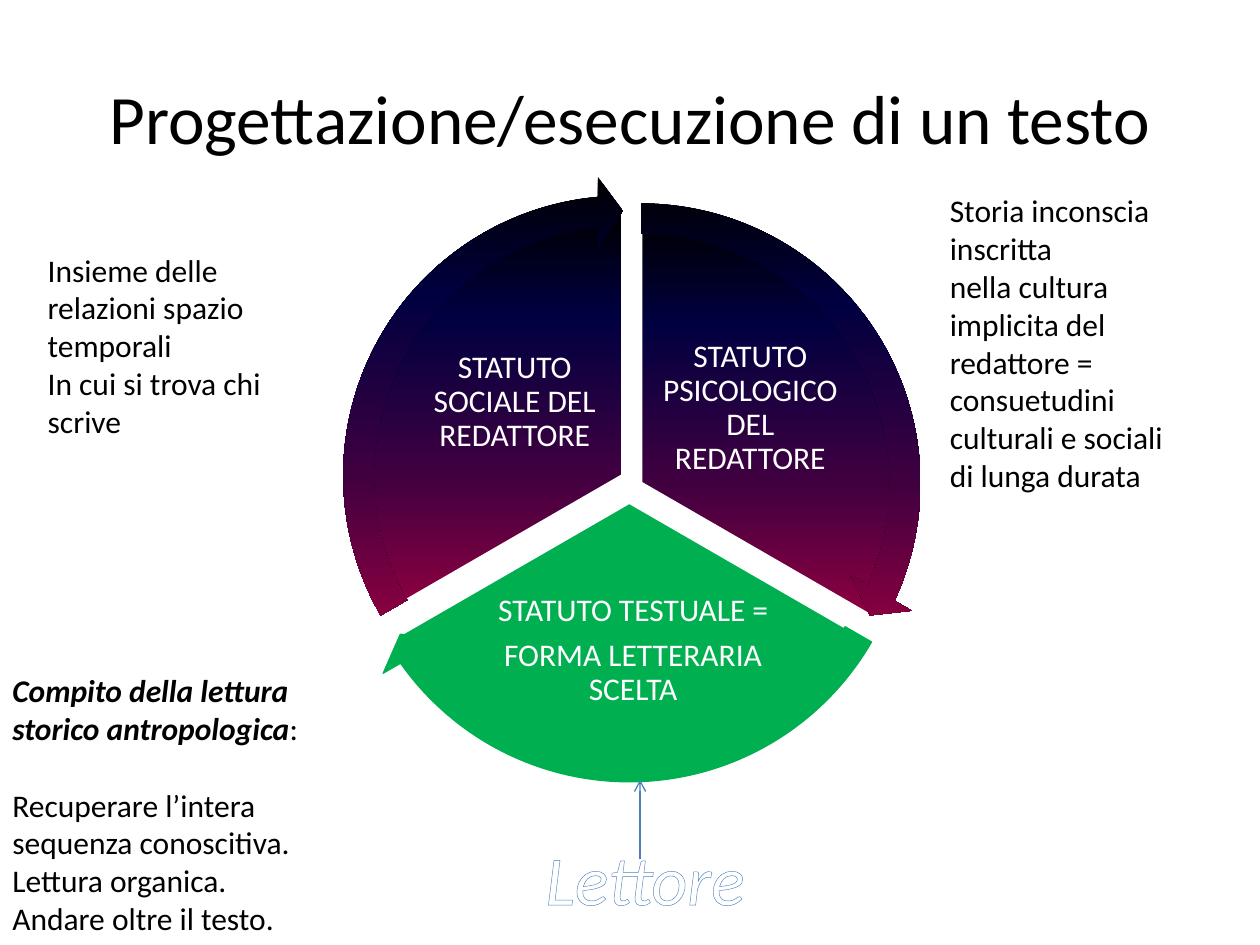
from copy import deepcopy

from lxml.etree import SubElement
from pptx import Presentation
from pptx.dml.color import RGBColor
from pptx.enum.shapes import MSO_CONNECTOR, MSO_SHAPE
from pptx.enum.text import MSO_ANCHOR, MSO_AUTO_SIZE, PP_ALIGN
from pptx.oxml.ns import qn
from pptx.util import Inches, Pt

BLACK = RGBColor(0x00, 0x00, 0x00)
WHITE = RGBColor(0xFF, 0xFF, 0xFF)
GREEN = RGBColor(0x00, 0xB0, 0x50)
CONNECTOR_BLUE = RGBColor(0x4B, 0x7E, 0xBC)
OUTLINE_BLUE = RGBColor(0x4F, 0x81, 0xBD)
SUNSET = [
    (0, BLACK),
    (0.2, RGBColor(0x00, 0x00, 0x40)),
    (0.5, RGBColor(0x40, 0x00, 0x40)),
    (0.75, RGBColor(0x8F, 0x00, 0x40)),
    (0.9, RGBColor(0xF2, 0x73, 0x00)),
    (1, RGBColor(0xFF, 0xBF, 0x00)),
]

BODY = {"size": Pt(18), "name": "Calibri"}
LABEL_FRAME = dict(
    {f"margin_{side}": Inches(0.03) for side in ("left", "top", "right", "bottom")},
    vertical_anchor=MSO_ANCHOR.MIDDLE,
)
LABEL_PARAGRAPH = {
    "alignment": PP_ALIGN.CENTER,
    "line_spacing": 0.9,
    "space_after": Pt(6.3),
}
GROWING = {"auto_size": MSO_AUTO_SIZE.SHAPE_TO_FIT_TEXT}

PIE_SIZE = 4.23
RING_MARGIN = 0.265
SECTORS = [
    {
        "offset": (0.14, 0.06), "fill": SUNSET, "pie": (162, 18),
        "arrow": (0.051, 3.275, 14.725, 161.994, 0.059),
        "label": (2.37, 0.95, 1.51, 1.26),
        "text": ["STATUTO PSICOLOGICO DEL REDATTORE"],
    },
    {
        "offset": (0.05, 0.21), "fill": GREEN, "pie": (18, 90),
        "arrow": (0.051, 3.275, 86.72, 18.005, 0.059),
        "label": (1.06, 2.95, 2.27, 1.11),
        "text": ["STATUTO TESTUALE =", "FORMA LETTERARIA SCELTA"],
    },
    {
        "offset": (0, 0), "fill": SUNSET, "pie": (90, 162),
        "arrow": (0.051, 3.275, 158.73, 90, 0.059),
        "label": (0.5, 0.9, 1.51, 1.26),
        "text": ["STATUTO SOCIALE DEL REDATTORE"],
    },
]


def apply(obj, values):
    for name, value in values.items():
        setattr(obj, name, value)


def add_run(p, text, color, font):
    r = p.add_run()
    r.text = text
    apply(r.font, font)
    r.font.color.rgb = color
    return r


def add_text(s, box, paragraphs, color=BLACK, frame=GROWING, paragraph={}, font=BODY):
    tf = s.shapes.add_textbox(*map(Inches, box)).text_frame
    apply(tf, {"word_wrap": True, **frame})
    for i, text in enumerate(paragraphs):
        p = tf.add_paragraph() if i else tf.paragraphs[0]
        apply(p, paragraph)
        add_run(p, text, color, font)
    return tf


def paint(sp, fill):
    if fill is not SUNSET:
        sp.fill.solid()
        sp.fill.fore_color.rgb = fill
        return
    sp.fill.gradient()
    sp.fill.gradient_angle = 270
    stop_list = sp._element.spPr.find(qn("a:gradFill")).find(qn("a:gsLst"))
    while len(stop_list) < len(SUNSET):
        stop_list.append(deepcopy(stop_list[0]))
    for stop, (position, color) in zip(sp.fill.gradient_stops, SUNSET):
        stop.position = position
        stop.color.rgb = color


def add_sector_shape(s, kind, x, y, size, angles, fill, line=None):
    sp = s.shapes.add_shape(kind, *map(Inches, (x, y, size, size)))
    sp.shadow.inherit = False
    for i, angle in enumerate(angles):
        sp.adjustments[i] = angle
    paint(sp, fill)
    if line:
        color, width = line
        sp.line.color.rgb = color
        sp.line.width = Pt(width)
    else:
        sp.line.fill.background()


def add_cycle(s, left, top):
    for sector in SECTORS:
        dx, dy = sector["offset"]
        add_sector_shape(s, MSO_SHAPE.PIE, left + dx, top + dy, PIE_SIZE,
                         sector["pie"], sector["fill"], (WHITE, 2))
        x, y, w, h = sector["label"]
        add_text(s, (left + x, top + y, w, h), sector["text"], WHITE,
                 LABEL_FRAME, LABEL_PARAGRAPH)
    for sector in SECTORS:
        dx, dy = sector["offset"]
        line = (GREEN, 0.75) if sector["fill"] is GREEN else None
        add_sector_shape(s, MSO_SHAPE.CIRCULAR_ARROW,
                         left + dx - RING_MARGIN, top + dy - RING_MARGIN,
                         PIE_SIZE + 2 * RING_MARGIN, sector["arrow"], sector["fill"], line)


def add_title(s, box):
    title = s.shapes.title
    apply(title, dict(zip(("left", "top", "width", "height"), map(Inches, box))))
    tf = title.text_frame
    tf.vertical_anchor = MSO_ANCHOR.MIDDLE
    p = tf.paragraphs[0]
    p.alignment = PP_ALIGN.CENTER
    add_run(p, "Progettazione/esecuzione di un testo", BLACK,
            {"size": Pt(39.6), "name": "Calibri"})


def add_reader(s, box):
    tf = add_text(s, box, ["Lettore"], WHITE, {**GROWING, "word_wrap": False},
                  {"alignment": PP_ALIGN.CENTER},
                  {"size": Pt(40), "name": "Calibri", "italic": True})
    properties = tf.paragraphs[0].runs[0].font._element
    outline = SubElement(properties, qn("a:ln"), w=str(Pt(0.8)))
    properties.insert(0, outline)
    fill = SubElement(outline, qn("a:solidFill"))
    SubElement(fill, qn("a:srgbClr"), val=str(OUTLINE_BLUE))

    x = Inches(box[0] + 0.87)
    arrow = s.shapes.add_connector(MSO_CONNECTOR.STRAIGHT, x, Inches(box[1] + 0.24),
                                   x, Inches(box[1] - 0.39))
    arrow.line.color.rgb = CONNECTOR_BLUE
    arrow.line.width = Pt(0.75)
    SubElement(arrow.line._get_or_add_ln(), qn("a:tailEnd"), type="arrow")
    SubElement(arrow._element.spPr, qn("a:effectLst"))


def add_task(s, box):
    tf = add_text(s, box, [
        "Compito della lettura storico antropologica",
        "Recuperare l’intera sequenza conoscitiva. Lettura organica.",
        "Andare oltre il testo.",
    ])
    heading, sequence = tf.paragraphs[:2]
    apply(heading.runs[0].font, {"bold": True, "italic": True})
    add_run(heading, ":", BLACK, BODY)
    sequence.space_before = Pt(22)


def main():
    prs = Presentation()
    prs.slide_width, prs.slide_height = Inches(10), Inches(7.5)
    s = prs.slides.add_slide(prs.slide_layouts[5])
    add_title(s, (0.5, 0.3, 9, 1.25))
    add_cycle(s, 2.83, 1.66)
    add_reader(s, (4.21, 6.58, 1.82, 0.77))
    add_text(s, (0.28, 1.94, 1.89, 1.62), [
        "Insieme delle relazioni spazio temporali",
        "In cui si trova chi scrive",
    ])
    add_text(s, (7.44, 1.47, 1.97, 2.52), [
        "Storia inconscia inscritta",
        "nella cultura implicita del redattore = consuetudini culturali e sociali di lunga durata",
    ])
    add_task(s, (0, 5.28, 3.03, 2.22))
    prs.save("out.pptx")


if __name__ == "__main__":
    main()
